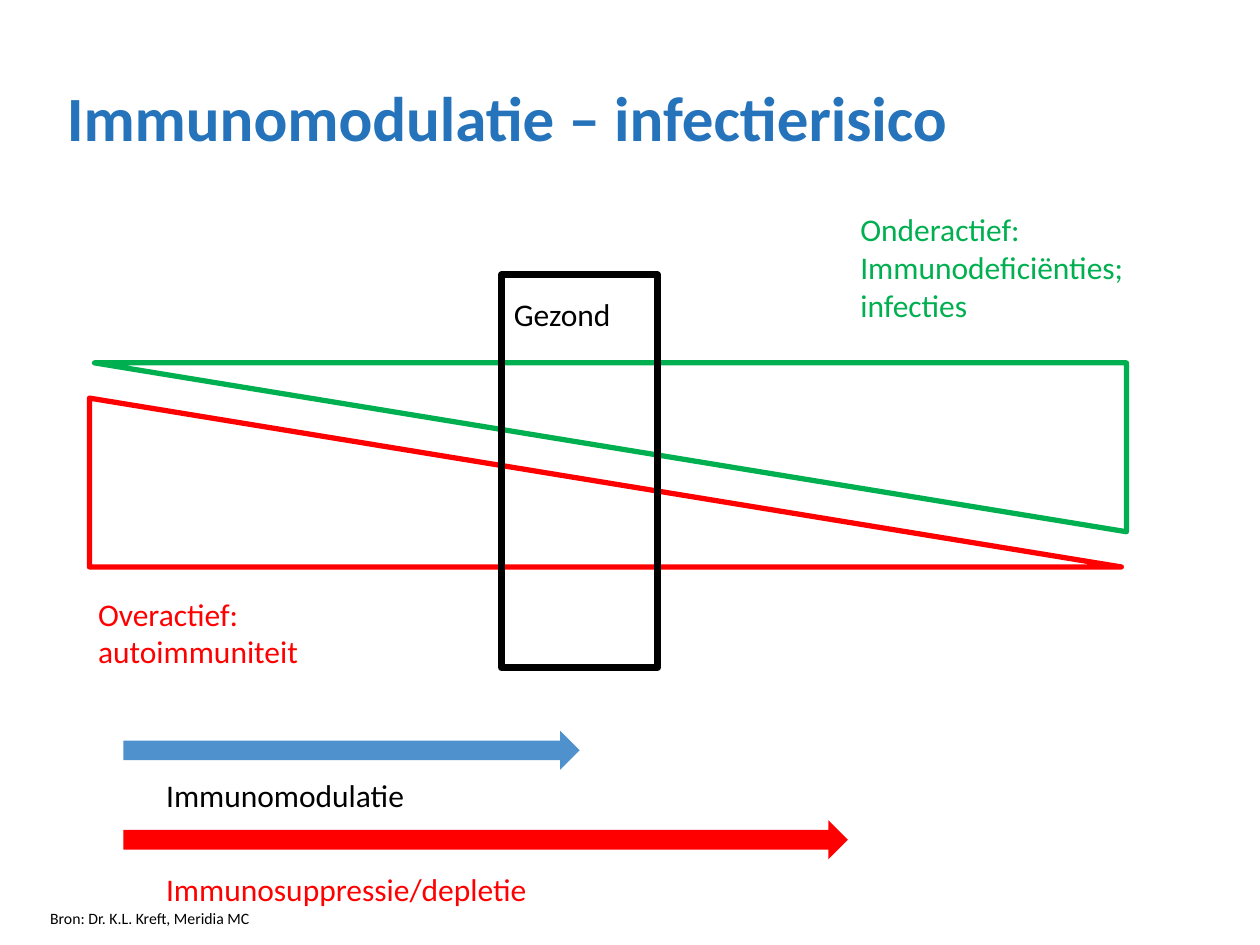
import dataclasses

import pptx
import pptx.dml.color
import pptx.enum.shapes
import pptx.enum.text
import pptx.oxml.ns
import pptx.util
from lxml import etree

Kind = pptx.enum.shapes.MSO_SHAPE
Anchor = pptx.enum.text.MSO_ANCHOR
Align = pptx.enum.text.PP_ALIGN

WIDE, HIGH = 10, 7.5
COLS, ROWS = 100, 75  # square grid cells


@dataclasses.dataclass(frozen=True)
class Theme:
    font: str = "Calibri"
    title: str = "2573BA"
    over: str = "FF0000"
    under: str = "00B050"
    ink: str = "000000"
    mild: str = "4F91CD"
    head: int = 36
    body: int = 18
    note: int = 9
    edge: float = 3
    frame: float = 3.75


class Deck:
    def __init__(self, theme):
        self.theme = theme
        self.file = pptx.Presentation()
        self.file.slide_width = pptx.util.Inches(WIDE)
        self.file.slide_height = pptx.util.Inches(HIGH)
        self.slide = self.file.slides.add_slide(self.file.slide_layouts[5])

    def place(self, col, row, cols, rows):
        """Turn grid cells into left, top, width and height."""
        across = self.file.slide_width / COLS
        down = self.file.slide_height / ROWS
        return (round(col * across), round(row * down),
                round(cols * across), round(rows * down))

    def fill_text(self, frame, lines, size, color, bold=False):
        frame.word_wrap = True
        for i, line in enumerate(lines):
            para = frame.paragraphs[0] if i == 0 else frame.add_paragraph()
            para.alignment = Align.LEFT
            run = para.add_run()
            run.text = line
            run.font.name = self.theme.font
            run.font.size = pptx.util.Pt(size)
            run.font.bold = bold
            run.font.color.rgb = pptx.dml.color.RGBColor.from_string(color)

    def title(self, text, *cells):
        box = self.slide.shapes.title
        box.left, box.top, box.width, box.height = self.place(*cells)
        box.text_frame.vertical_anchor = Anchor.BOTTOM
        self.fill_text(box.text_frame, [text], self.theme.head,
                       self.theme.title, True)

    def label(self, lines, color, *cells, size=None):
        box = self.slide.shapes.add_textbox(*self.place(*cells))
        self.fill_text(box.text_frame, lines, size or self.theme.body, color)

    def outline(self, kind, color, width, *cells, turn=0):
        shape = self.slide.shapes.add_shape(kind, *self.place(*cells))
        shape.shadow.inherit = False
        shape.rotation = turn
        shape.fill.background()
        shape.line.color.rgb = pptx.dml.color.RGBColor.from_string(color)
        shape.line.width = pptx.util.Pt(width)
        edge = shape.element.spPr.find(pptx.oxml.ns.qn("a:ln"))
        etree.SubElement(edge, pptx.oxml.ns.qn("a:round"))

    def arrow(self, color, *cells):
        shape = self.slide.shapes.add_shape(Kind.RIGHT_ARROW,
                                            *self.place(*cells))
        shape.shadow.inherit = False
        shape.fill.solid()
        shape.fill.fore_color.rgb = pptx.dml.color.RGBColor.from_string(color)
        shape.line.fill.background()


def main():
    look = Theme()
    deck = Deck(look)
    deck.title("Immunomodulatie – infectierisico", 4.3, 0.2, 90, 12.5)

    wedge = Kind.RIGHT_TRIANGLE
    deck.outline(wedge, look.over, look.edge, 7.1, 31.6, 81.9, 13.4)
    deck.outline(wedge, look.under, look.edge, 7.5, 28.8, 81.9, 13.4, turn=180)
    deck.label(["Overactief:", "autoimmuniteit"], look.over,
               6.8, 46.7, 30.3, 7.7)
    deck.label(["Onderactief:", "Immunodeficiënties;", "infecties"],
               look.under, 67.3, 16.2, 29.9, 11.1)

    deck.outline(Kind.RECTANGLE, look.ink, look.frame, 39.8, 21.8, 12.4, 31.2)
    deck.label(["Gezond"], look.ink, 39.8, 22.9, 21.3, 4.4)

    deck.arrow(look.mild, 9.8, 58, 36.2, 3.1)
    deck.label(["Immunomodulatie"], look.ink, 12.2, 61.1, 33.8, 4)
    deck.arrow(look.over, 9.8, 65.1, 57.5, 3.1)
    deck.label(["Immunosuppressie/depletie"], look.over, 12.2, 68.6, 61.4, 4)

    deck.label(["Bron: Dr. K.L. Kreft, Meridia MC"], look.ink,
               3, 71.6, 92.6, 2.5, size=look.note)
    deck.file.save("out.pptx")


if __name__ == "__main__":
    main()
